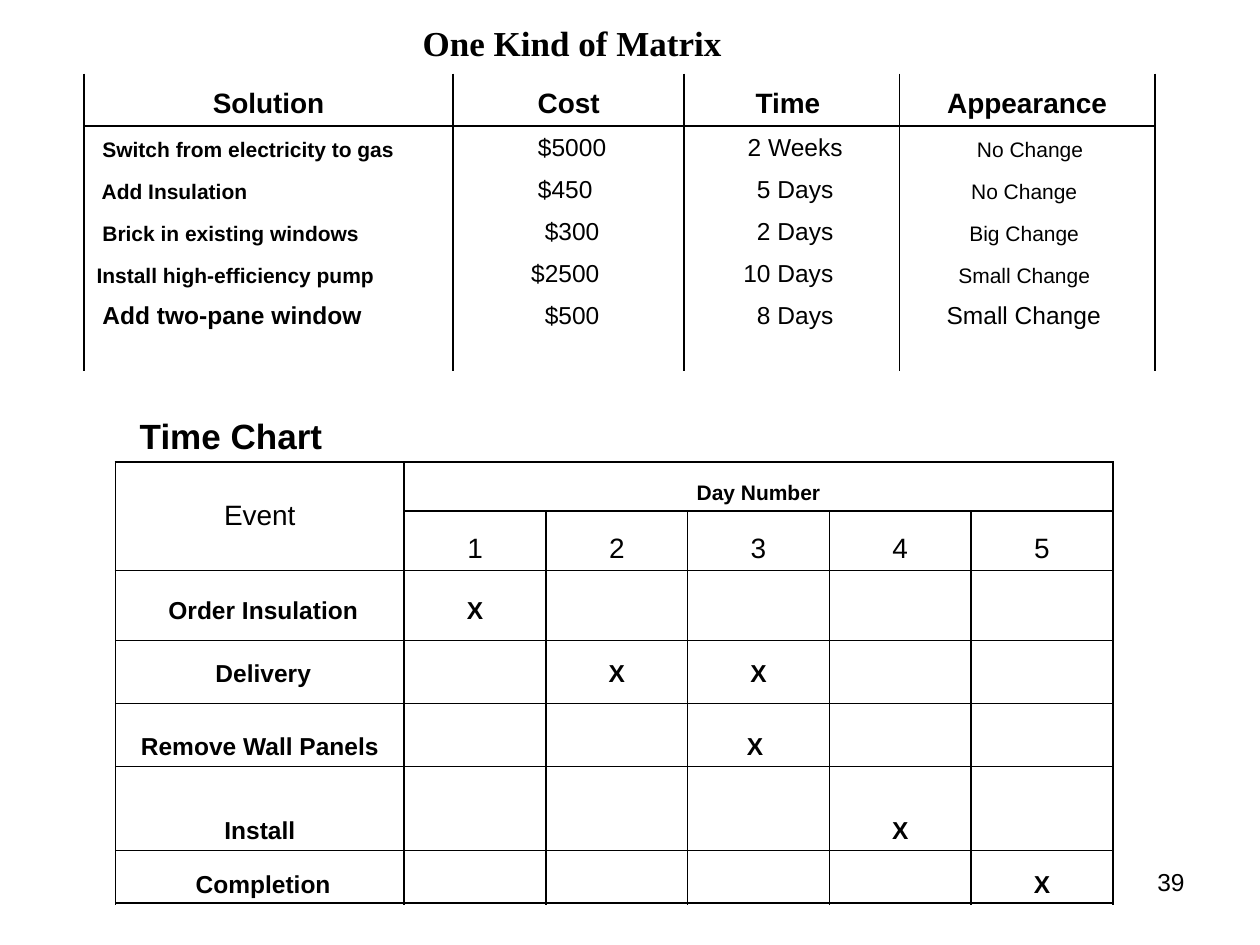
from lxml.etree import SubElement
from pptx import Presentation
from pptx.dml.color import RGBColor
from pptx.enum.shapes import MSO_CONNECTOR
from pptx.enum.text import MSO_ANCHOR, PP_ALIGN
from pptx.oxml.ns import qn
from pptx.util import Pt

BLACK = "000000"
LEFT, CENTER, RIGHT = PP_ALIGN.LEFT, PP_ALIGN.CENTER, PP_ALIGN.RIGHT
HANGING = 27

HEADINGS = ["Solution", "Cost", "Time ", "Appearance"]
SOLUTIONS = [
    [" Switch from electricity to gas", " $5000", " 2 Weeks", " No Change"],
    [" Add Insulation", "$450 ", " 5 Days", "No Change "],
    [" Brick in existing windows", " $300", " 2 Days", "Big Change "],
    ["Install high-efficiency pump ", "$2500 ", "10 Days ", "Small Change "],
    [" Add two-pane window", " $500", " 8 Days", "Small Change "],
]
SOLUTION_GRID = {
    "left": 48, "top": 42,
    "columns": [211, 132, 123, 146],
    "rows": [30, 24, 24, 24, 24, 24, 20],
}

EVENTS = [
    (" Order Insulation", {1: "X"}),
    (" Delivery", {2: "X", 3: "X"}),
    ("Remove Wall Panels", {3: "X "}),
    ("Install", {4: "X"}),
    (" Completion", {5: "X"}),
]
DAYS = 5
EVENT_GRID = {
    "left": 66, "top": 264,
    "columns": [165] + [81] * DAYS,
    "rows": [28, 34, 34.5, 36, 42, 48, 31],
}
EVENT_LINES = [402, 438, 366, 516, 486]


def color(value):
    return RGBColor.from_string(value)


def write(frame, text, size, bold=False, align=CENTER, name="Arial"):
    paragraph = frame.paragraphs[0]
    paragraph.alignment = align
    run = paragraph.add_run()
    run.text = text
    formats = {"name": name, "size": Pt(size), "bold": bold}
    for attribute, value in formats.items():
        setattr(run.font, attribute, value)
    run.font.color.rgb = color(BLACK)
    return paragraph


def set_borders(cell, sides):
    properties = cell._tc.get_or_add_tcPr()
    for side in "LRTB":
        line = SubElement(properties, qn(f"a:ln{side}"), w=str(Pt(1)))
        if side in sides:
            fill = SubElement(line, qn("a:solidFill"))
            SubElement(fill, qn("a:srgbClr"), val=BLACK)
        else:
            SubElement(line, qn("a:noFill"))


def add_grid(slide, grid, border_rule):
    columns, rows = grid["columns"], grid["rows"]
    frame = slide.shapes.add_table(
        len(rows), len(columns), Pt(grid["left"]), Pt(grid["top"]),
        Pt(sum(columns)), Pt(sum(rows)))
    table = frame.table
    table.first_row = table.horz_banding = False
    for column, width in zip(table.columns, columns):
        column.width = Pt(width)
    for number, (row, height) in enumerate(zip(table.rows, rows)):
        row.height = Pt(height)
        for cell in row.cells:
            set_borders(cell, border_rule(number))
            cell.fill.background()
            cell.vertical_anchor = MSO_ANCHOR.BOTTOM
    return table


def finish_empty_cells(table):
    for cell in table.iter_cells():
        if not cell.text_frame.text:
            SubElement(cell.text_frame.paragraphs[0]._p, qn("a:endParaRPr"), sz="1000")


def add_solution_table(slide):
    table = add_grid(slide, SOLUTION_GRID,
                     lambda row: {0: "LRB", 1: "LRT"}.get(row, "LR"))
    for row, texts in enumerate([HEADINGS] + SOLUTIONS):
        for column, text in enumerate(texts):
            if row == 0:
                size = 16
            elif row == len(SOLUTIONS) or column in (1, 2):
                size = 14
            else:
                size = 12
            align = LEFT if row and column == 0 else CENTER
            paragraph = write(table.cell(row, column).text_frame, text, size,
                              row == 0 or column == 0, align)
            properties = paragraph._p.get_or_add_pPr()
            properties.set("marL", str(Pt(HANGING)))
            properties.set("indent", str(Pt(-HANGING)))
    finish_empty_cells(table)


def add_event_table(slide):
    table = add_grid(slide, EVENT_GRID,
                     lambda row: {0: "LRTB", 1: "LRTB", 2: "LRT"}.get(row, "LR"))
    event, day_number = table.cell(0, 0), table.cell(0, 1)
    event.merge(table.cell(1, 0))
    day_number.merge(table.cell(0, DAYS))
    event.vertical_anchor = MSO_ANCHOR.MIDDLE
    write(event.text_frame, "Event", 16)
    write(day_number.text_frame, "Day Number", 12, True)
    for day in range(1, DAYS + 1):
        write(table.cell(1, day).text_frame, str(day), 16)
    for row, (name, marks) in enumerate(EVENTS, start=2):
        for column, text in {0: name, **marks}.items():
            write(table.cell(row, column).text_frame, text, 14, True)
    finish_empty_cells(table)


def add_event_lines(slide):
    left = EVENT_GRID["left"]
    right = left + sum(EVENT_GRID["columns"])
    for y in EVENT_LINES:
        line = slide.shapes.add_connector(
            MSO_CONNECTOR.STRAIGHT, Pt(left), Pt(y), Pt(right), Pt(y))
        line.line.color.rgb = color(BLACK)
        line.line.width = Pt(0.75)
        SubElement(line._element.spPr, qn("a:effectLst"))


def add_label(slide, box, text, size, anchor, **formats):
    frame = slide.shapes.add_textbox(*map(Pt, box)).text_frame
    frame.word_wrap = True
    frame.vertical_anchor = anchor
    write(frame, text, size, **formats)


def main():
    presentation = Presentation()
    presentation.slide_width, presentation.slide_height = Pt(720), Pt(540)
    slide = presentation.slides.add_slide(presentation.slide_layouts[5])

    title = slide.shapes.title
    title_box = {"left": 60, "top": 222, "width": 144, "height": 54}
    for attribute, value in title_box.items():
        setattr(title, attribute, Pt(value))
    title.text_frame.vertical_anchor = MSO_ANCHOR.MIDDLE
    write(title.text_frame, "Time Chart", 20, True)

    add_solution_table(slide)
    add_event_table(slide)
    add_label(slide, (210, 0, 234, 48), "One Kind of Matrix", 20,
              MSO_ANCHOR.MIDDLE, bold=True, name="Times New Roman")
    add_event_lines(slide)
    add_label(slide, (516, 492, 168, 37.5), "39", 14, MSO_ANCHOR.TOP, align=RIGHT)
    presentation.save("out.pptx")


if __name__ == "__main__":
    main()
